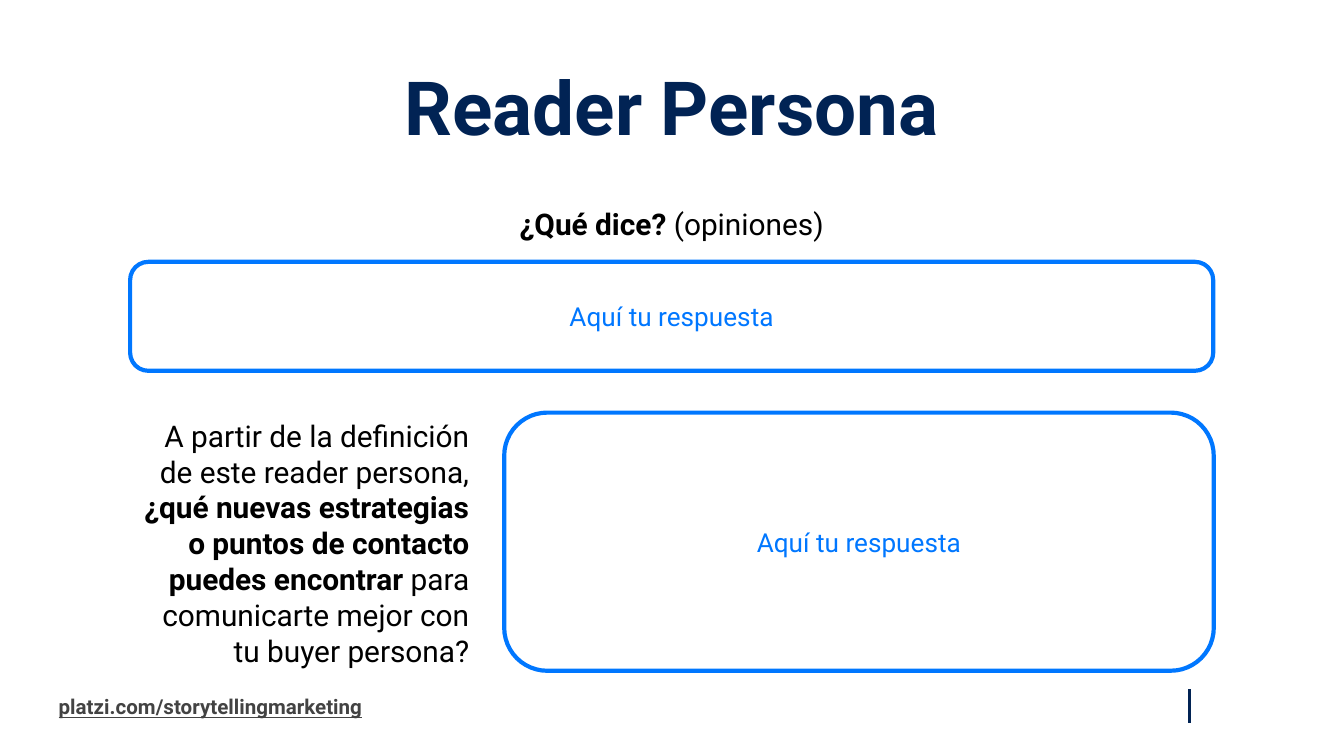
import pptx
import pptx.dml.color
import pptx.enum.shapes
import pptx.enum.text
import pptx.oxml.ns
import pptx.util
from pptx.util import Cm
from lxml import etree

NAVY = pptx.dml.color.RGBColor(0x01, 0x23, 0x54)
BLUE = pptx.dml.color.RGBColor(0x00, 0x77, 0xFF)
GREY = pptx.dml.color.RGBColor(0x43, 0x43, 0x43)
BLACK = pptx.dml.color.RGBColor(0x00, 0x00, 0x00)

ALIGN = pptx.enum.text.PP_ALIGN
ANCHOR = pptx.enum.text.MSO_ANCHOR
FONT_NAME = "Roboto"
INSET = Cm(0.25)


def write_text(shape, *pieces, size, color, align=ALIGN.CENTER,
               anchor=ANCHOR.MIDDLE, underline=None, line_spacing=None):
    """Fill a shape with one paragraph made of (text, bold) pieces."""
    frame = shape.text_frame
    frame.word_wrap = True
    frame.vertical_anchor = anchor
    frame.margin_left = frame.margin_right = INSET
    frame.margin_top = frame.margin_bottom = INSET
    paragraph = frame.paragraphs[0]
    paragraph.alignment = align
    paragraph.line_spacing = line_spacing
    for text, bold in pieces:
        run = paragraph.add_run()
        run.text = text
        run.font.name = FONT_NAME
        run.font.size = pptx.util.Pt(size)
        run.font.color.rgb = color
        run.font.bold = bold
        run.font.underline = underline


def add_text(slide, left, top, width, height, *pieces, **text_format):
    """Add a text box with formatted text."""
    shape = slide.shapes.add_textbox(Cm(left), Cm(top), Cm(width), Cm(height))
    write_text(shape, *pieces, **text_format)


def add_answer_box(slide, left, top, width, height):
    """Add a rounded outline where the reader writes an answer."""
    shape = slide.shapes.add_shape(
        pptx.enum.shapes.MSO_SHAPE.ROUNDED_RECTANGLE,
        Cm(left), Cm(top), Cm(width), Cm(height))
    shape.shadow.inherit = False
    shape.fill.background()
    shape.line.color.rgb = BLUE
    shape.line.width = pptx.util.Pt(2.25)
    write_text(shape, ("Aquí tu respuesta", False), size=14, color=BLUE)


def add_footer_rule(slide, left, top, bottom):
    """Add the short vertical rule at the foot of the slide."""
    connector = slide.shapes.add_connector(
        pptx.enum.shapes.MSO_CONNECTOR.STRAIGHT,
        Cm(left), Cm(top), Cm(left), Cm(bottom))
    connector.line.color.rgb = NAVY
    connector.line.width = pptx.util.Pt(1.5)
    properties = connector._element.spPr
    etree.SubElement(properties, pptx.oxml.ns.qn("a:effectLst"))


def main():
    """Build the reader persona slide and save it."""
    presentation = pptx.Presentation()
    presentation.slide_width = Cm(25.4)
    presentation.slide_height = Cm(14.29)
    slide = presentation.slides.add_slide(presentation.slide_layouts[6])

    add_text(slide, 0.86, 12.93, 7.9, 0.86,
             ("platzi.com/storytellingmarketing", True),
             size=11, color=GREY, align=ALIGN.LEFT, underline=True)
    add_footer_rule(slide, 22.48, 13.03, 13.67)

    add_text(slide, 0.86, 1.22, 23.67, 1.6, ("Reader Persona", True),
             size=40, color=NAVY, anchor=ANCHOR.TOP, line_spacing=0.8)

    add_answer_box(slide, 9.53, 7.8, 13.41, 4.88)
    add_text(slide, 2.24, 7.77, 6.88, 4.98,
             ("A partir de la definición de este reader persona, ", False),
             ("¿qué nuevas estrategias o puntos de contacto puedes encontrar",
              True),
             (" para comunicarte mejor con tu buyer persona?", False),
             size=16, color=BLACK, align=ALIGN.RIGHT)

    add_answer_box(slide, 2.46, 4.95, 20.47, 2.06)
    add_text(slide, 3.35, 3.43, 18.69, 1.6,
             ("¿Qué dice? ", True), ("(opiniones)", False),
             size=16, color=BLACK)

    presentation.save("out.pptx")


if __name__ == "__main__":
    main()
